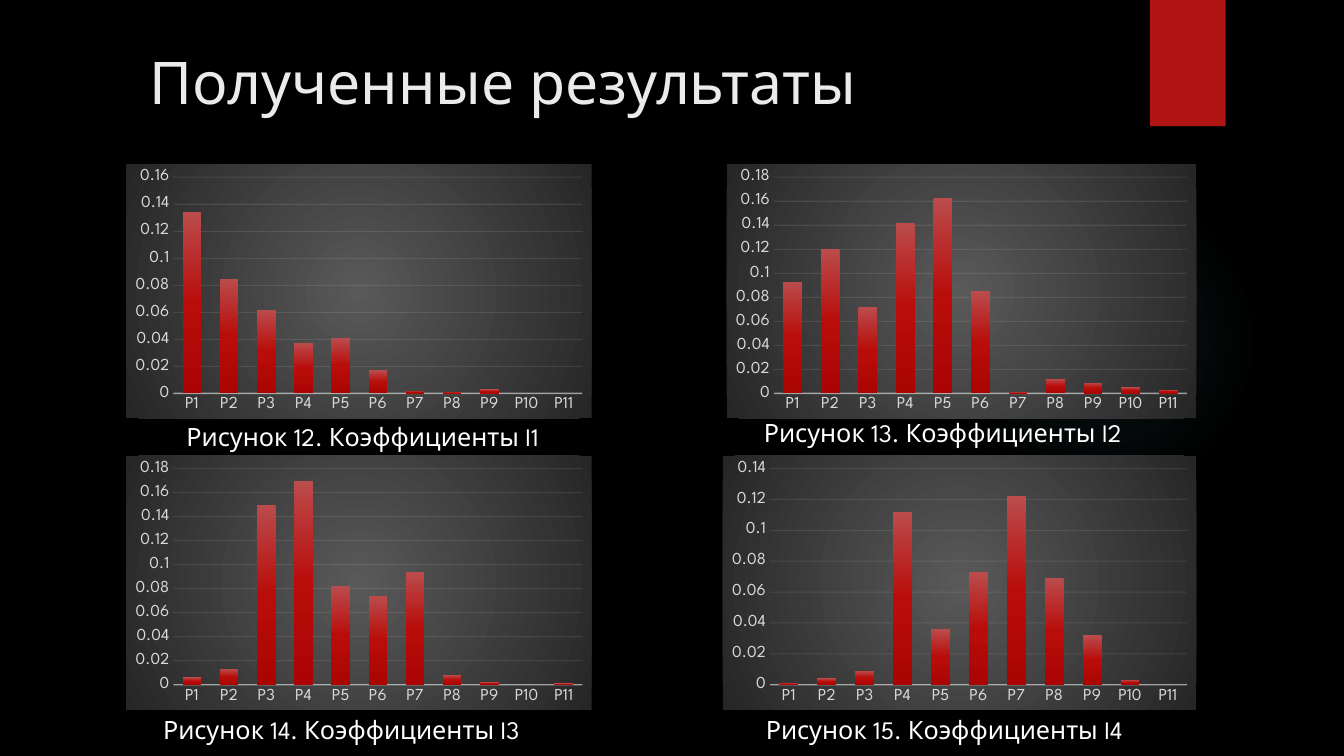
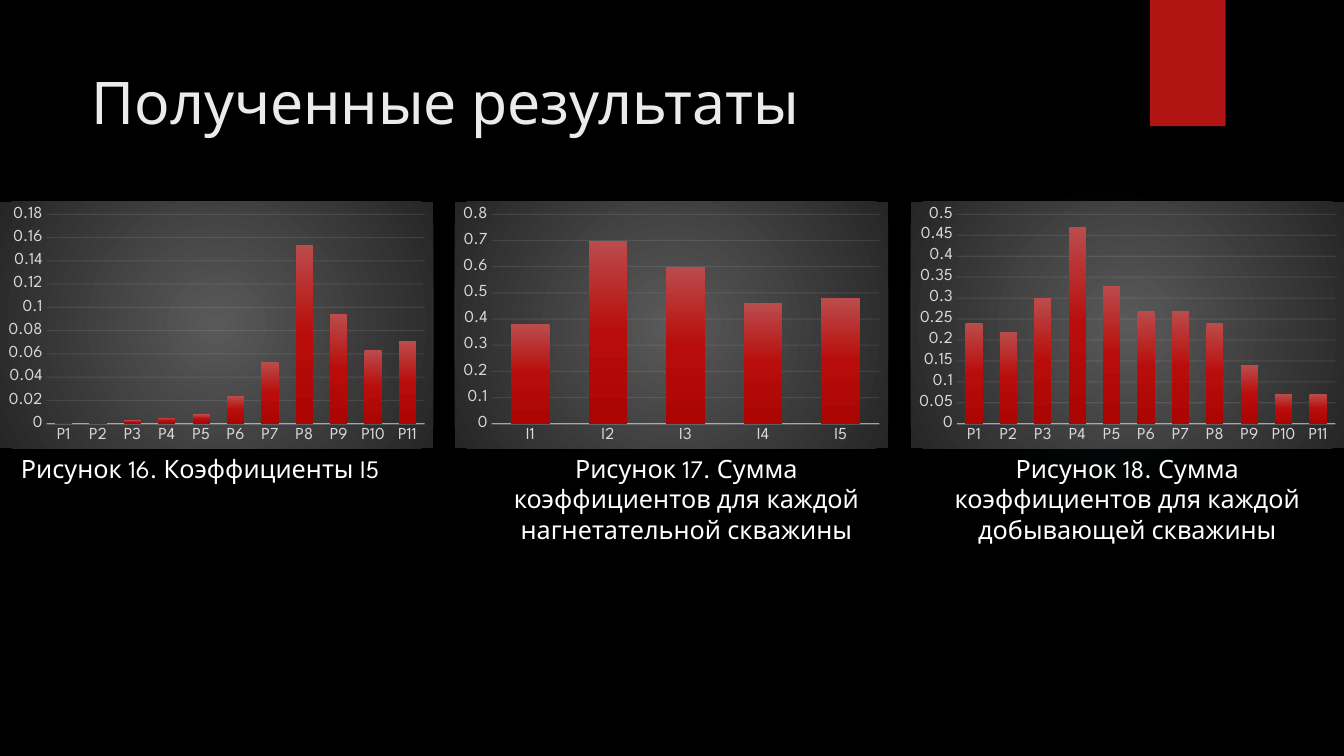
from pptx import Presentation
from pptx.chart.data import CategoryChartData
from pptx.dml.color import RGBColor
from pptx.enum.chart import XL_CHART_TYPE, XL_TICK_MARK
from pptx.enum.shapes import MSO_SHAPE
from pptx.enum.text import MSO_ANCHOR, PP_ALIGN
from pptx.oxml import parse_xml
from pptx.oxml.ns import nsdecls, qn
from pptx.util import Cm, Pt

FONT = "League Spartan"
RED, GLOW, WHITE, PALE = "B01513", "50B9C1", "FFFFFF", "EBEBEB"
LABEL, RULE = "D9D9D9", "F2F2F2"
PANEL = [(0, "595959", 100), (100, "262626", 100)]
BAR = [(0, "BB4C4C", 100), (50, "B80D0B", 100), (100, "AA0503", 100)]
HALO = [(0, GLOW, 7), (36, GLOW, 6), (69, GLOW, 0)]
ROUND = ('<a:path path="circle"><a:fillToRect l="50000" t="50000" '
         'r="50000" b="50000"/></a:path>')
DOWN = '<a:lin ang="5400000" scaled="0"/>'
WELLS = [f"P{n}" for n in range(1, 12)]
PUMPS = [f"I{n}" for n in range(1, 6)]
HEAD = "Полученные результаты"

FOUR = [
    dict(box=(3.18, 4.14, 11.73, 6.4), note=(1.27, 6.35, 10.34, 1.02),
         text="Рисунок 12. Коэффициенты I1", top=0.16, step=0.02, cats=WELLS,
         vals=[0.134, 0.085, 0.062, 0.037, 0.041, 0.017, 0.002, 0.001, 0.003, 0, 0]),
    dict(box=(18.31, 4.14, 11.84, 6.4), note=(0.69, 6.25, 10.34, 1.02),
         text="Рисунок 13. Коэффициенты I2", top=0.18, step=0.02, cats=WELLS,
         vals=[0.093, 0.12, 0.072, 0.142, 0.163, 0.085, 0.001, 0.012, 0.009, 0.005, 0.003]),
    dict(box=(3.18, 11.48, 11.73, 6.4), note=(0.68, 6.4, 10.34, 1.02),
         text="Рисунок 14. Коэффициенты I3", top=0.18, step=0.02, cats=WELLS,
         vals=[0.006, 0.013, 0.15, 0.17, 0.082, 0.074, 0.094, 0.008, 0.002, 0, 0.001]),
    dict(box=(18.21, 11.48, 11.94, 6.4), note=(0.84, 6.4, 10.34, 1.02),
         text="Рисунок 15. Коэффициенты I4", top=0.14, step=0.02, cats=WELLS,
         vals=[0.001, 0.004, 0.009, 0.112, 0.036, 0.073, 0.122, 0.069, 0.032, 0.003, 0]),
]
THREE = [
    dict(box=(0, 5.08, 10.92, 6.22), note=(0.28, 6.22, 10.34, 1.02),
         text="Рисунок 16. Коэффициенты I5", top=0.18, step=0.02, cats=WELLS,
         vals=[0.001, 0.001, 0.003, 0.005, 0.008, 0.024, 0.053, 0.154, 0.094, 0.063, 0.071]),
    dict(box=(11.46, 5.08, 10.92, 6.22), note=(0.38, 6.22, 10.92, 2.57),
         text="Рисунок 17. Сумма коэффициентов для каждой нагнетательной скважины",
         align=PP_ALIGN.CENTER, top=0.8, step=0.1, cats=PUMPS,
         vals=[0.38, 0.7, 0.6, 0.46, 0.48]),
    dict(box=(22.95, 5.08, 10.92, 6.22), note=(0, 6.22, 10.92, 2.57),
         text="Рисунок 18. Сумма коэффициентов для каждой добывающей скважины",
         align=PP_ALIGN.CENTER, top=0.5, step=0.05, cats=WELLS,
         vals=[0.24, 0.22, 0.3, 0.47, 0.33, 0.27, 0.27, 0.24, 0.14, 0.07, 0.07]),
]


def tint(code):
    return RGBColor.from_string(code)


def cms(box):
    return [Cm(n) for n in box]


def blend(stops, shade):
    marks = "".join(
        f'<a:gs pos="{at * 1000}"><a:srgbClr val="{code}">'
        f'<a:alpha val="{part * 1000}"/></a:srgbClr></a:gs>'
        for at, code, part in stops)
    return parse_xml(f'<a:gradFill {nsdecls("a")} rotWithShape="1">'
                     f'<a:gsLst>{marks}</a:gsLst>{shade}</a:gradFill>')


def recolor(props, stops, shade):
    old = props.find(qn("a:solidFill"))
    props.replace(old, blend(stops, shade))


def style(font, size, code):
    font.name = FONT
    font.size = Pt(size)
    font.color.rgb = tint(code)


def write(slide, box, text, size, code, align=PP_ALIGN.LEFT):
    frame = slide.shapes.add_textbox(*cms(box)).text_frame
    frame.word_wrap = True
    frame.vertical_anchor = MSO_ANCHOR.TOP
    para = frame.paragraphs[0]
    para.alignment = align
    run = para.add_run()
    run.text = text
    style(run.font, size, code)


def block(slide, kind, box, code):
    shape = slide.shapes.add_shape(kind, *cms(box))
    shape.shadow.inherit = False
    shape.fill.solid()
    shape.fill.fore_color.rgb = tint(code)
    shape.line.fill.background()
    return shape


def stroke(line, code, width, part):
    line.width = Pt(width)
    line.color.rgb = tint(code)
    color = line._get_or_add_ln().find(".//" + qn("a:srgbClr"))
    color.append(parse_xml(f'<a:alpha {nsdecls("a")} val="{part * 1000}"/>'))


def dress(chart):
    root = chart.element
    flat = parse_xml(f'<c:roundedCorners {nsdecls("c")} val="0"/>')
    root.find(qn("c:date1904")).addnext(flat)
    props = parse_xml(f'<c:spPr {nsdecls("c", "a")}/>')
    props.append(blend(PANEL, ROUND))
    props.append(parse_xml(f'<a:ln {nsdecls("a")}><a:noFill/></a:ln>'))
    root.find(qn("c:chart")).addnext(props)


def graph(slide, box, cats, vals, top, step):
    data = CategoryChartData()
    data.categories = cats
    data.add_series("Series 1", vals)
    chart = slide.shapes.add_chart(
        XL_CHART_TYPE.COLUMN_CLUSTERED, *cms(box), data).chart
    chart.has_legend = False
    chart.has_title = False
    style(chart.font, 10, WHITE)
    dress(chart)

    plot = chart.plots[0]
    plot.gap_width = 100
    plot.overlap = -24
    plot.vary_by_categories = False
    bars = plot.series[0]
    bars.invert_if_negative = False
    bars.format.fill.solid()
    bars.format.fill.fore_color.rgb = tint(RED)
    recolor(bars.format.fill._xPr, BAR, DOWN)

    base, scale = chart.category_axis, chart.value_axis
    for axis in (base, scale):
        axis.major_tick_mark = XL_TICK_MARK.NONE
        axis.minor_tick_mark = XL_TICK_MARK.NONE
        style(axis.tick_labels.font, 12, LABEL)
    stroke(base.format.line, RULE, 1, 54)
    scale.minimum_scale = 0
    scale.maximum_scale = top
    scale.major_unit = step
    scale.format.line.fill.background()
    stroke(scale.major_gridlines.format.line, RULE, 0.75, 10)


def panel(slide, box, note, text, cats, vals, top, step, align=PP_ALIGN.LEFT):
    graph(slide, box, cats, vals, top, step)
    left, high, wide, tall = note
    place = (box[0] + left, box[1] + high, wide, tall)
    write(slide, place, text, 18, WHITE, align)


def page(deck, spot, panels):
    slide = deck.slides.add_slide(deck.slide_layouts[6])
    halo = block(slide, MSO_SHAPE.OVAL, (23.9, 4.65, 7.82, 7.82), GLOW)
    recolor(halo.fill._xPr, HALO, ROUND)
    block(slide, MSO_SHAPE.RECTANGLE, (28.98, 0, 1.91, 3.18), RED)
    write(slide, (*spot, 25.98, 1.65), HEAD, 42, PALE)
    for item in panels:
        panel(slide, **item)


def main():
    deck = Presentation()
    deck.slide_width, deck.slide_height = Cm(33.87), Cm(19.05)
    back = deck.slide_master.background.fill
    back.solid()
    back.fore_color.rgb = tint("000000")
    page(deck, (3.51, 1.02), FOUR)
    page(deck, (2.06, 1.52), THREE)
    deck.save("out.pptx")


if __name__ == "__main__":
    main()
